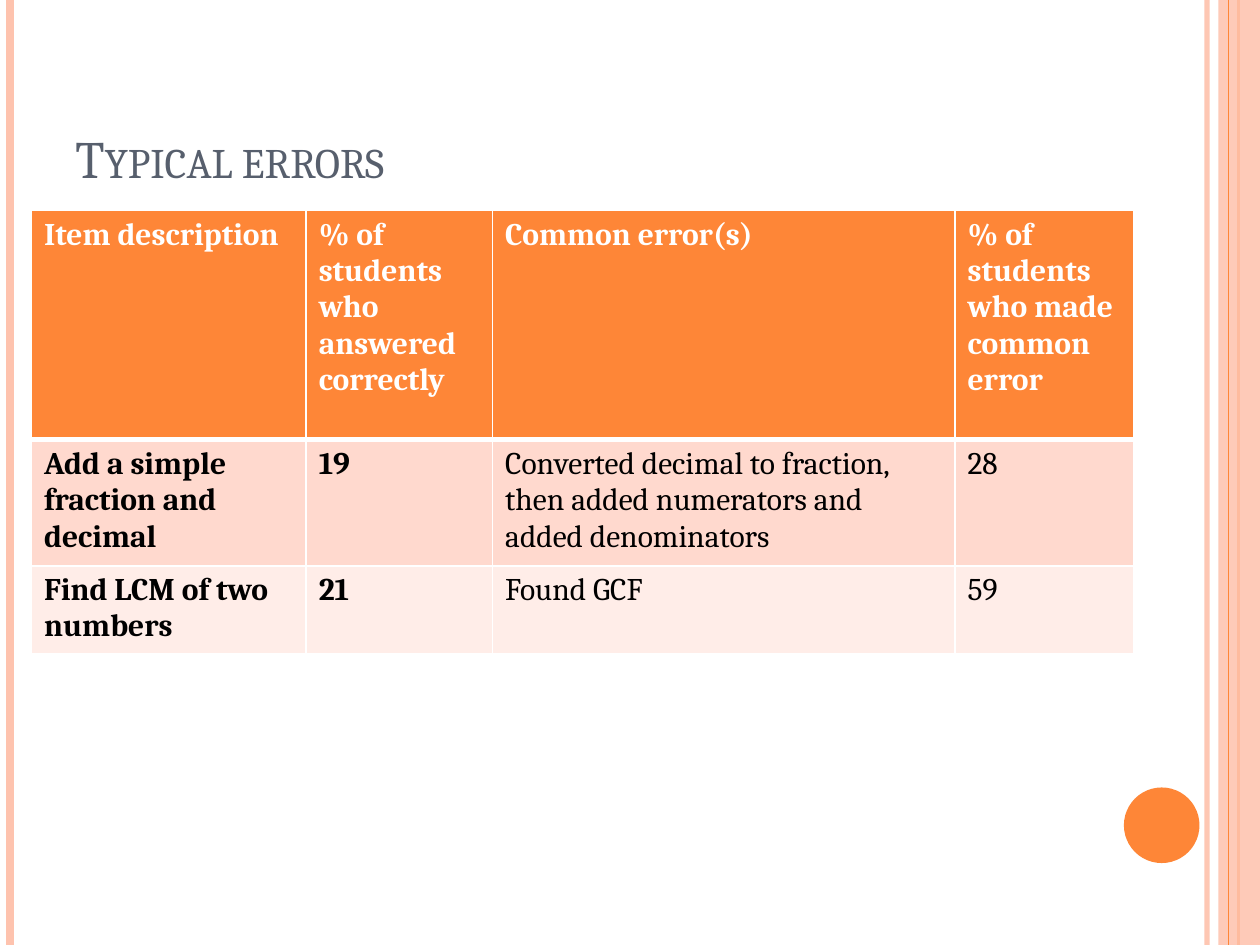
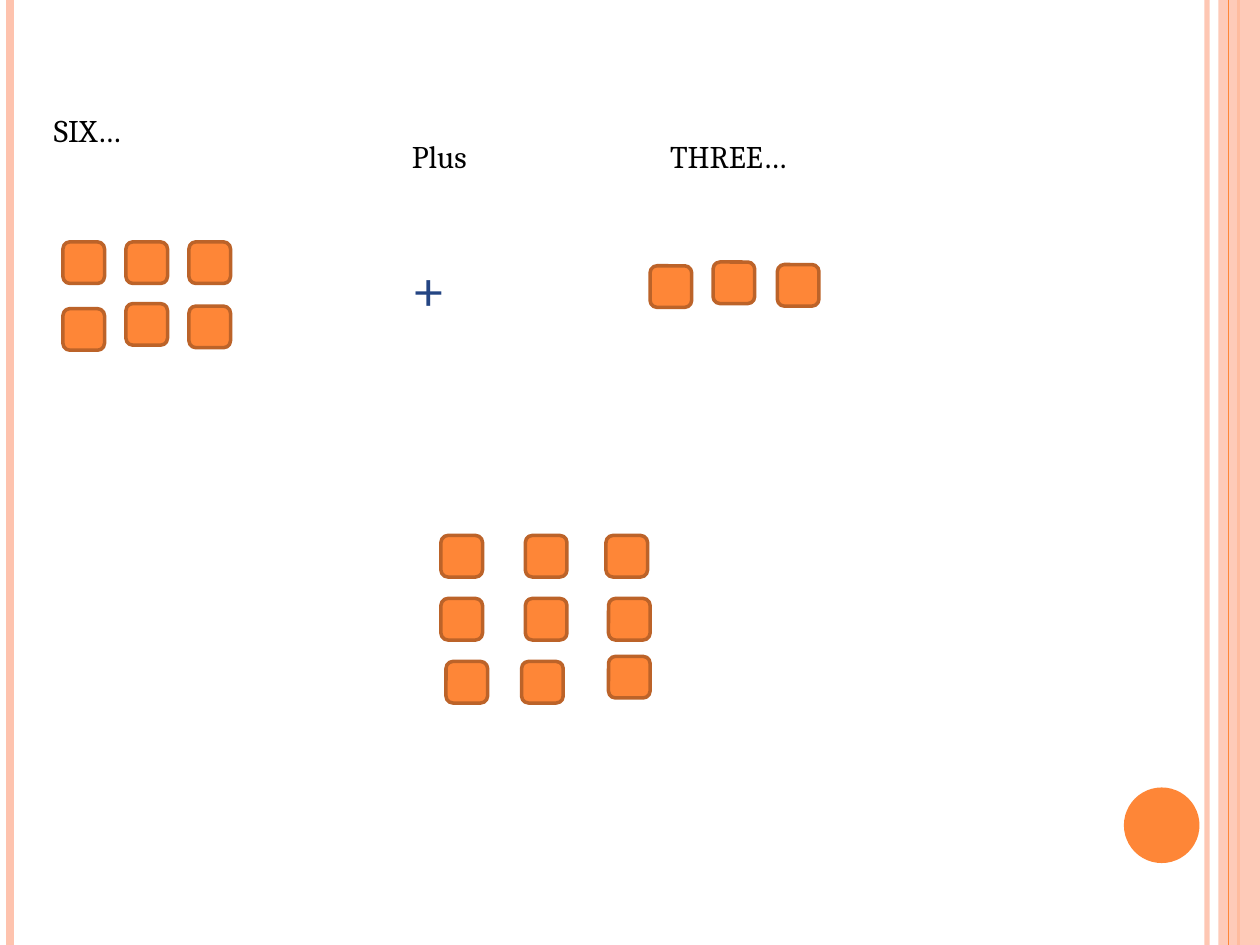
from lxml import etree
from pptx import Presentation
from pptx.dml.color import RGBColor
from pptx.enum import shapes, text
from pptx.oxml import ns
from pptx.util import Inches, Pt

COLORS = {
    "orange": "FE8637", "peach": "FEC3AE", "outline": "BC6329",
    "title": "575F6D", "plus": "244583", "black": "000000", "white": "FFFFFF",
    "row_dark": "FFD9CE", "row_light": "FFEDE8",
}
FONT = "Cambria"
SLIDE_W, SLIDE_H = 10, 7.5
COUNTER_SIZE = 0.33

COLUMN_WIDTHS = [2.18, 1.48, 3.67, 1.42]
ROW_HEIGHTS = [1.82, 0.97, 0.67]
ERROR_ROWS = [
    ["Item description", "% of\nstudents\nwho\nanswered\ncorrectly",
     "Common error(s)", "% of\nstudents\nwho made\ncommon\nerror"],
    ["Add a simple fraction and decimal", "19",
     "Converted decimal to fraction, then added numerators and added denominators", "28"],
    ["Find LCM of two numbers", "21", "Found GCF", "59"],
]

# Counters sit slightly off their grids, as if placed by hand
SIX = [(0.5, 1.92), (1, 1.92), (1.5, 1.92), (0.5, 2.45), (1, 2.41), (1.5, 2.43)]
THREE = [(5.16, 2.11), (5.66, 2.08), (6.17, 2.1)]
NINE = [(3.5, 4.25), (4.17, 4.25), (4.81, 4.25),
        (3.5, 4.75), (4.17, 4.75), (4.83, 4.75),
        (3.54, 5.25), (4.14, 5.25), (4.83, 5.21)]


def rgb(name):
    return RGBColor.from_string(COLORS[name])


def set_alpha(properties, percent):
    color = properties.find(".//" + ns.qn("a:srgbClr"))
    etree.SubElement(color, ns.qn("a:alpha"), val=str(percent * 1000))


def style_text(frame, size, color, bold=False):
    for paragraph in frame.paragraphs:
        font = paragraph.font
        font.name, font.size, font.bold = FONT, Pt(size), bold
        font.color.rgb = rgb(color)


def add_label(slide, words, left, top, width, height, size=18, color="black"):
    label = slide.shapes.add_textbox(*map(Inches, (left, top, width, height)))
    label.text_frame.word_wrap = True
    label.text_frame.text = words
    style_text(label.text_frame, size, color)
    return label


def add_title(slide, words):
    title = add_label(slide, words, 0.5, 0.3, 8.17, 1.25, 30, "title")
    title.text_frame.vertical_anchor = text.MSO_ANCHOR.BOTTOM
    run = title.text_frame.paragraphs[0].runs[0]
    run.font._element.set("cap", "small")


def add_block(slide, kind, left, top, width, height, fill, outline=None):
    block = slide.shapes.add_shape(kind, *map(Inches, (left, top, width, height)))
    block.shadow.inherit = False
    block.fill.solid()
    block.fill.fore_color.rgb = rgb(fill)
    if outline:
        block.line.color.rgb = rgb(outline)
        block.line.width = Pt(2)
    else:
        block.line.fill.background()
    return block


def add_stripe(slide, x, color, width):
    stripe = slide.shapes.add_connector(
        shapes.MSO_CONNECTOR.STRAIGHT, Inches(x), 0, Inches(x), Inches(SLIDE_H))
    stripe.line.color.rgb = rgb(color)
    stripe.line.width = Pt(width)
    etree.SubElement(stripe._element.spPr, ns.qn("a:effectLst"))
    return stripe


def add_framed_slide(prs):
    """Blank slide with the side stripes, right band and corner disc."""
    slide = prs.slides.add_slide(prs.slide_layouts[6])
    set_alpha(add_stripe(slide, 9.58, "peach", 3)._element.spPr, 93)
    add_stripe(slide, 0.08, "peach", 4.5)
    add_stripe(slide, 9.83, "orange", 1.5)
    band = add_block(slide, shapes.MSO_SHAPE.RECTANGLE, 9.67, 0, 0.33, SLIDE_H, "peach")
    set_alpha(band._element.spPr, 87)
    add_stripe(slide, 9.75, "orange", 0.75)
    add_block(slide, shapes.MSO_SHAPE.OVAL, 8.92, 6.25, 0.6, 0.6, "orange")
    return slide


def add_counters(slide, positions):
    for left, top in positions:
        add_block(slide, shapes.MSO_SHAPE.ROUNDED_RECTANGLE, left, top,
                  COUNTER_SIZE, COUNTER_SIZE, "orange", "outline")


def set_borders(cell, **widths):
    properties = cell._tc.get_or_add_tcPr()
    for side in "LRTB":
        border = etree.SubElement(properties, ns.qn("a:ln" + side),
                                  w=str(Pt(widths.get(side, 1))))
        fill = etree.SubElement(border, ns.qn("a:solidFill"))
        etree.SubElement(fill, ns.qn("a:srgbClr"), val=COLORS["white"])


def add_error_table(slide):
    table = slide.shapes.add_table(
        len(ROW_HEIGHTS), len(COLUMN_WIDTHS), Inches(0.25), Inches(1.67),
        Inches(sum(COLUMN_WIDTHS)), Inches(sum(ROW_HEIGHTS))).table
    for column, width in zip(table.columns, COLUMN_WIDTHS):
        column.width = Inches(width)
    row_fills = ["orange", "row_dark", "row_light"]
    header_rule = [{"B": 3}, {"T": 3}, {}]
    for r, row in enumerate(ERROR_ROWS):
        table.rows[r].height = Inches(ROW_HEIGHTS[r])
        for c, words in enumerate(row):
            cell = table.cell(r, c)
            cell.text = words
            set_borders(cell, **header_rule[r])
            cell.fill.solid()
            cell.fill.fore_color.rgb = rgb(row_fills[r])
            style_text(cell.text_frame, 18, "black" if r else "white",
                       bold=r == 0 or c < 2)


def main():
    prs = Presentation()
    prs.slide_width, prs.slide_height = Inches(SLIDE_W), Inches(SLIDE_H)

    # Typical errors
    errors = add_framed_slide(prs)
    add_title(errors, "Typical errors")
    add_error_table(errors)

    # Six plus three
    addition = add_framed_slide(prs)
    add_counters(addition, SIX)
    add_label(addition, "SIX…", 0.33, 0.83, 2.25, 0.4)
    add_label(addition, "Plus", 3.17, 1.04, 1.67, 0.4)
    add_label(addition, "+", 3.17, 1.92, 1.33, 0.71, 36, "plus")
    add_counters(addition, THREE)
    add_label(addition, "THREE…", 5.22, 1.04, 2.25, 0.4)
    add_counters(addition, NINE)

    prs.save("out.pptx")


if __name__ == "__main__":
    main()
